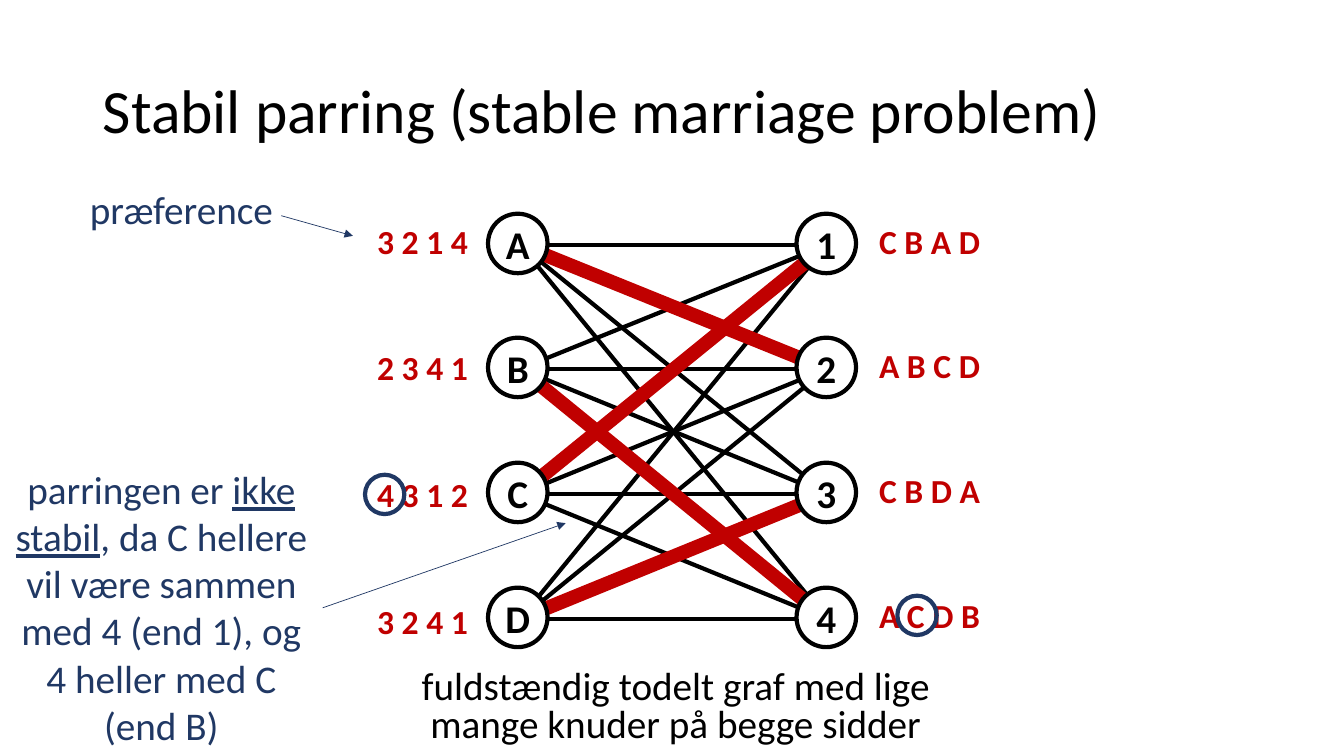
from itertools import product

from lxml.etree import SubElement
from pptx import Presentation
from pptx.dml.color import RGBColor
from pptx.enum.shapes import MSO_CONNECTOR, MSO_SHAPE
from pptx.enum.text import MSO_ANCHOR, MSO_AUTO_SIZE, PP_ALIGN
from pptx.oxml.ns import qn
from pptx.util import Emu, Pt

EMU_PER_PX = 9144  # 100 px to the inch
BLACK, WHITE, RED, NAVY = "000000", "FFFFFF", "C00000", "203864"

NODE_SIZE = 59
LEFT_NODES, RIGHT_NODES = 484, 790
NODE_TOPS = [212 + row * 371 // 3 for row in range(4)]
LEFT_PREFERENCE_TOPS = [214 + row * 377 // 3 for row in range(4)]
LEFT_PREFERENCES = ["3 2 1 4", "2 3 4 1", "4 3 1 2", "3 2 4 1"]
RIGHT_PREFERENCES = ["C B A D", "A B C D", "C B D A", "A C D B"]
MATCHING = [("C", "1"), ("D", "3"), ("B", "4"), ("A", "2")]


def px(length):
    return Emu(length * EMU_PER_PX)


def color(hex_string):
    return RGBColor.from_string(hex_string)


def add_span(para, text, size=28, fill=BLACK, bold=False, underline=False):
    span = para.add_run()
    span.text = text
    font = span.font
    font.name, font.size = "Calibri", Pt(size)
    font.bold, font.underline = bold, underline
    font.color.rgb = color(fill)


def add_text(page, text, left, top, width, height, align=PP_ALIGN.LEFT, **style):
    """Add a text box and return its paragraph."""
    box = page.shapes.add_textbox(px(left), px(top), px(width), px(height))
    box.text_frame.word_wrap = True
    para = box.text_frame.paragraphs[0]
    para.alignment = align
    add_span(para, text, **style)
    return para


def add_line(page, start, end, stroke=BLACK, weight=3, arrow=False):
    points = [px(value) for value in (*start, *end)]
    line = page.shapes.add_connector(MSO_CONNECTOR.STRAIGHT, *points)
    line.line.color.rgb = color(stroke)
    line.line.width = Pt(weight)
    if arrow:
        SubElement(line.line._get_or_add_ln(), qn("a:tailEnd"), type="triangle")
    SubElement(line._element.spPr, qn("a:effectLst"))


def add_circle(page, left, top, size, stroke, fill=None):
    circle = page.shapes.add_shape(
        MSO_SHAPE.OVAL, px(left), px(top), px(size), px(size))
    circle.shadow.inherit = False
    if fill:
        circle.fill.solid()
        circle.fill.fore_color.rgb = color(fill)
    else:
        circle.fill.background()
    circle.line.color.rgb = color(stroke)
    circle.line.width = Pt(3)
    return circle


def add_node(page, name, left, top):
    node = add_circle(page, left, top, NODE_SIZE, BLACK, WHITE)
    frame = node.text_frame
    frame.word_wrap = False
    frame.vertical_anchor = MSO_ANCHOR.MIDDLE
    frame.paragraphs[0].alignment = PP_ALIGN.CENTER
    add_span(frame.paragraphs[0], name, bold=True)


def add_edge(page, left_name, right_name, **style):
    start_top = NODE_TOPS["ABCD".index(left_name)]
    end_top = NODE_TOPS["1234".index(right_name)]
    add_line(page, (LEFT_NODES + 32, start_top + 31),
             (RIGHT_NODES + 30, end_top + 31), **style)


def add_title(page, text):
    title = page.shapes.title
    title.left, title.top = px(92), px(40)
    title.width, title.height = px(1150), px(145)
    frame = title.text_frame
    frame.auto_size = MSO_AUTO_SIZE.NONE
    frame.vertical_anchor = MSO_ANCHOR.MIDDLE
    para = frame.paragraphs[0]
    para.alignment = PP_ALIGN.LEFT
    para.line_spacing = 0.9
    add_span(para, text, size=44)


def add_graph(page):
    for left_name, right_name in product("ABCD", "1234"):
        add_edge(page, left_name, right_name)
    for left_name, right_name in MATCHING:
        add_edge(page, left_name, right_name, stroke=RED, weight=10)
    for names, left in (("ABCD", LEFT_NODES), ("1234", RIGHT_NODES)):
        for name, top in zip(names, NODE_TOPS):
            add_node(page, name, left, top)


def add_preferences(page):
    style = {"size": 24, "fill": RED, "bold": True}
    for text, top in zip(RIGHT_PREFERENCES, NODE_TOPS):
        add_text(page, text, 862, top + 2, 159, 50, **style)
    for text, top in zip(LEFT_PREFERENCES, LEFT_PREFERENCE_TOPS):
        add_text(page, text, 315, top, 159, 50, PP_ALIGN.RIGHT, **style)
    add_circle(page, 362, 471, 39, NAVY)
    add_circle(page, 890, 591, 39, NAVY)


def add_notes_on_graph(page):
    caption = add_text(
        page, "fuldstændig todelt graf med lige mange knuder på begge sidder",
        369, 660, 602, 91, PP_ALIGN.CENTER)
    caption.line_spacing = 0.8
    caption.space_before = Pt(10)

    add_text(page, "præference", 47, 179, 266, 57, PP_ALIGN.CENTER, fill=NAVY)
    add_line(page, (279, 214), (350, 234), NAVY, 0.5, arrow=True)

    verdict = add_text(
        page, "parringen er ", 0, 457, 320, 293, PP_ALIGN.CENTER, fill=NAVY)
    add_span(verdict, "ikke stabil", fill=NAVY, underline=True)
    add_span(verdict, ", da C hellere vil være sammen med 4 (end 1), "
             "og 4 heller med C (end B)", fill=NAVY)
    add_line(page, (320, 603), (561, 519), NAVY, 0.5, arrow=True)


def main():
    deck = Presentation()
    deck.slide_width, deck.slide_height = px(1333), px(750)
    page = deck.slides.add_slide(deck.slide_layouts.get_by_name("Title Only"))
    add_title(page, "Stabil parring (stable marriage problem)")
    add_graph(page)
    add_preferences(page)
    add_notes_on_graph(page)
    deck.save("out.pptx")


if __name__ == "__main__":
    main()
